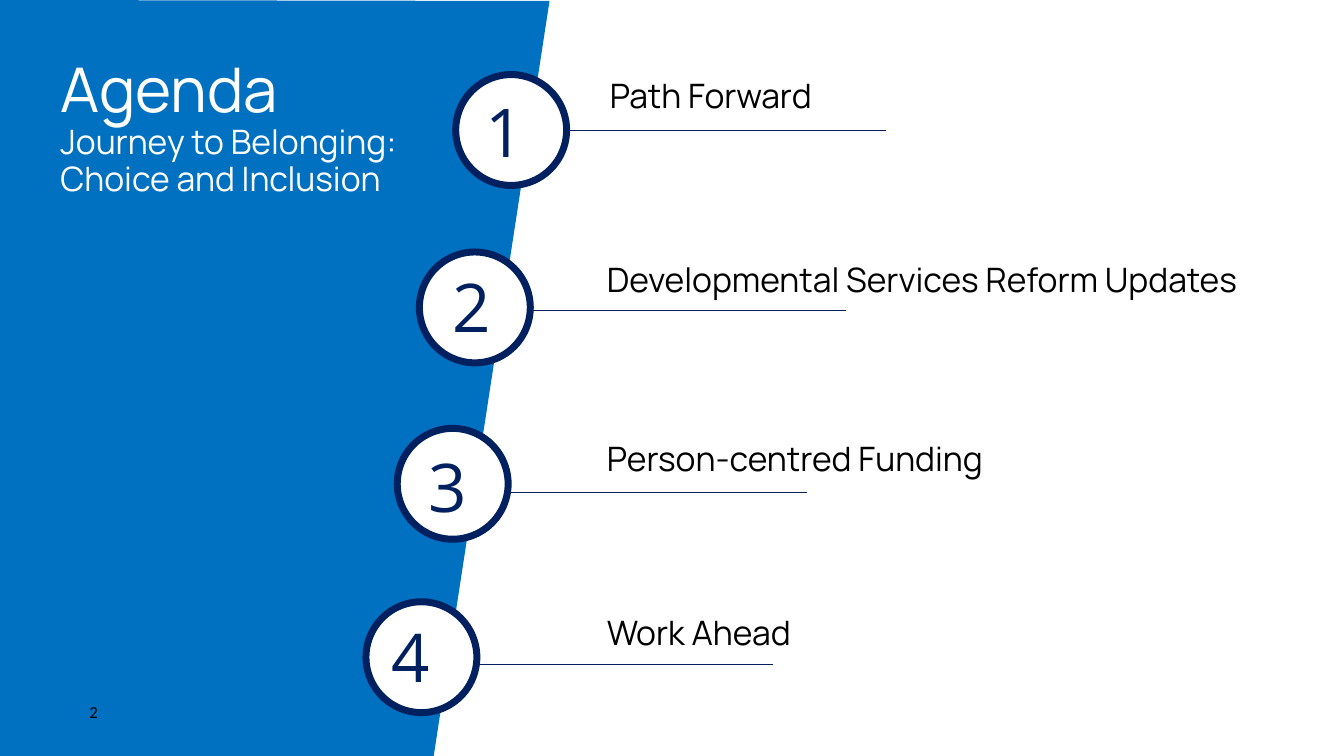
from pptx import Presentation
from pptx.dml.color import RGBColor
from pptx.enum.shapes import MSO_CONNECTOR, MSO_SHAPE
from pptx.enum.text import MSO_ANCHOR as Anchor, PP_ALIGN as Align
from pptx.oxml.ns import qn
from pptx.util import Inches, Pt

HEADING = [("Agenda", "title"), ("Journey to Belonging:", "body"), ("Choice and Inclusion", "body")]
AGENDA = [
    {"topic": "Path Forward", "topic_at": (5.95, 0.74), "circle": (4.52, 0.74),
     "number": (4.71, 0.84), "rule": (5.6, 8.79, 1.29)},
    {"topic": "Developmental Services Reform Updates", "topic_at": (5.92, 2.56), "circle": (4.16, 2.5),
     "number": (4.38, 2.58), "rule": (5.22, 8.39, 3.08)},
    {"topic": "Person-centred Funding", "topic_at": (5.92, 4.34), "circle": (3.94, 4.25),
     "number": (4.15, 4.36), "rule": (4.81, 8, 4.88)},
    {"topic": "Work Ahead", "topic_at": (5.92, 6.07), "circle": (3.63, 5.97),
     "number": (3.78, 6.05), "rule": (4.49, 7.67, 6.59)},
]
PAGE_NUMBER = "2"
PANEL = [(0, 0), (5.45, 0.01), (4.3, 7.51), (0, 7.5)]
CIRCLE_SIZE = 1.1

THEME = {
    "panel": RGBColor(0x00, 0x70, 0xC0),
    "navy": RGBColor(0x00, 0x20, 0x60),
    "white": RGBColor(0xFF, 0xFF, 0xFF),
    "black": RGBColor(0, 0, 0),
    "title": {"name": "Manrope", "size": Pt(44)},
    "body": {"name": "Manrope", "size": Pt(24)},
    "number": {"name": "Open Sans", "size": Pt(48)},
    "page": {"name": "Calibri", "size": Pt(12)},
    "ring": Pt(5),
    "rule": Pt(0.5),
}


def apply(target, formats):
    for name, value in formats.items():
        setattr(target, name, value)


def add_text(slide, box, lines, color, frame=None, paragraph=None):
    text_frame = slide.shapes.add_textbox(*map(Inches, box)).text_frame
    apply(text_frame, {"word_wrap": True, **(frame or {})})
    for index, (text, style) in enumerate(lines):
        line = text_frame.add_paragraph() if index else text_frame.paragraphs[0]
        apply(line, paragraph or {})
        run = line.add_run()
        run.text = text
        apply(run.font, THEME[style])
        run.font.color.rgb = THEME[color]


def add_panel(slide):
    corners = [(Inches(x), Inches(y)) for x, y in PANEL]
    builder = slide.shapes.build_freeform(*corners[0], scale=1.0)
    builder.add_line_segments(corners[1:], close=True)
    panel = builder.convert_to_shape()
    panel.shadow.inherit = False
    panel.fill.solid()
    panel.fill.fore_color.rgb = THEME["panel"]
    panel.line.fill.background()


def add_rule(slide, start, end, y):
    rule = slide.shapes.add_connector(
        MSO_CONNECTOR.STRAIGHT, Inches(end), Inches(y), Inches(start), Inches(y))
    rule.line.color.rgb = THEME["navy"]
    rule.line.width = THEME["rule"]
    properties = rule.element.spPr
    properties.append(properties.makeelement(qn("a:effectLst"), {}))


def add_circle(slide, left, top):
    circle = slide.shapes.add_shape(
        MSO_SHAPE.OVAL, *map(Inches, (left, top, CIRCLE_SIZE, CIRCLE_SIZE)))
    circle.shadow.inherit = False
    circle.fill.solid()
    circle.fill.fore_color.rgb = THEME["white"]
    circle.line.color.rgb = THEME["navy"]
    circle.line.width = THEME["ring"]


def main():
    deck = Presentation()
    apply(deck, {"slide_width": Inches(13.33), "slide_height": Inches(7.5)})
    slide = deck.slides.add_slide(deck.slide_layouts[6])
    add_panel(slide)
    add_text(slide, (0.5, 0.54, 4.71, 1.65), HEADING, "white", paragraph={"line_spacing": 0.9})
    add_text(slide, (0.51, 6.86, 0.56, 0.4), [(PAGE_NUMBER, "page")], "black",
             {"vertical_anchor": Anchor.MIDDLE}, {"alignment": Align.RIGHT})
    for number, item in enumerate(AGENDA, 1):
        add_rule(slide, *item["rule"])
        add_circle(slide, *item["circle"])
        add_text(slide, (*item["number"], 0.59, 0.91), [(str(number), "number")], "navy",
                 {"word_wrap": False, "vertical_anchor": Anchor.MIDDLE}, {"alignment": Align.CENTER})
        add_text(slide, (*item["topic_at"], 6.74, 0.5), [(item["topic"], "body")], "black",
                 paragraph={"line_spacing": 0.9, "space_before": Pt(4), "space_after": Pt(4)})
    deck.save("out.pptx")


if __name__ == "__main__":
    main()
